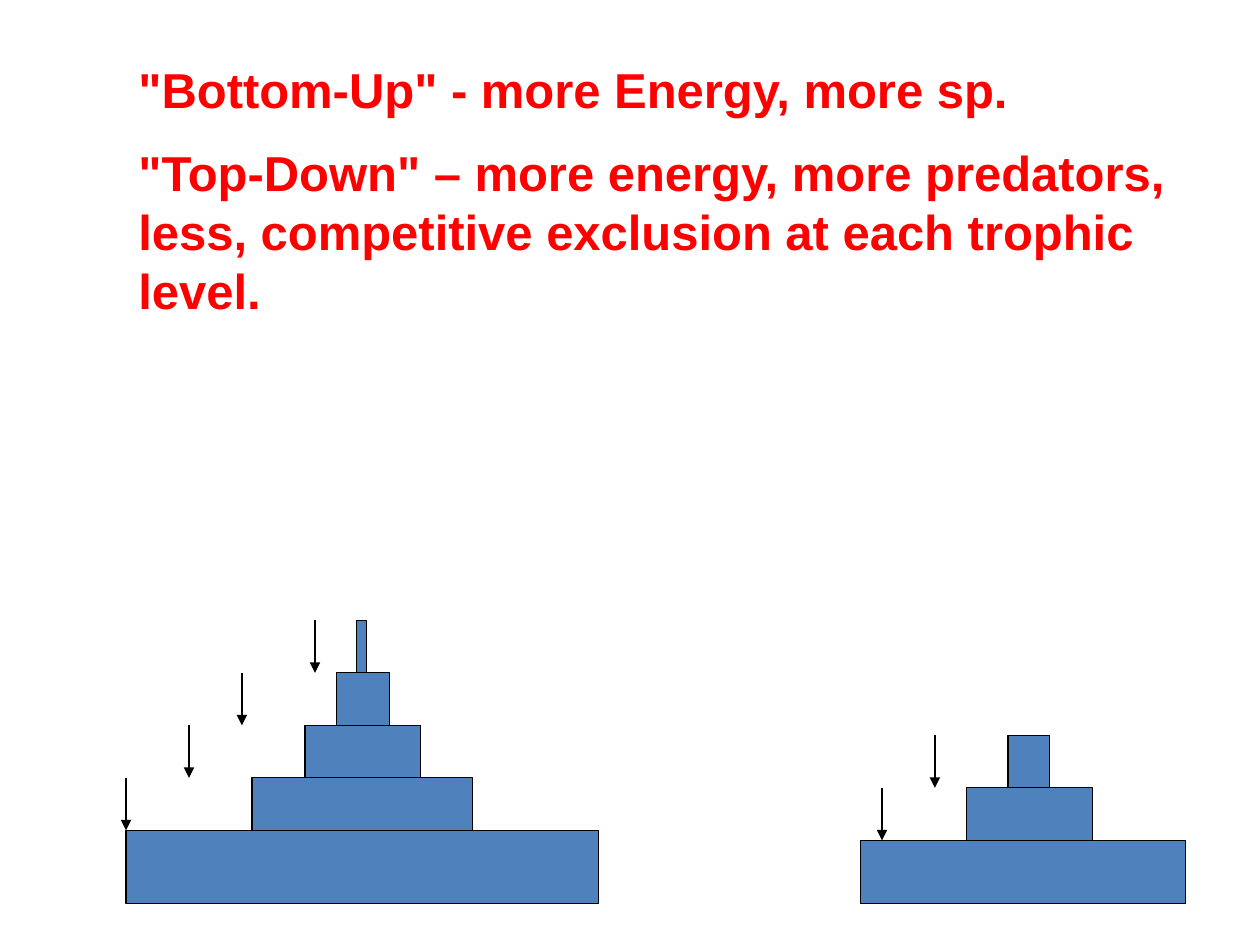
from lxml.etree import SubElement
from pptx import Presentation
from pptx.dml.color import RGBColor
from pptx.enum.shapes import MSO_CONNECTOR, MSO_SHAPE
from pptx.enum.text import MSO_AUTO_SIZE
from pptx.oxml.ns import qn
from pptx.util import Inches, Pt

STATEMENTS = [
    '"Bottom-Up" - more Energy, more sp.',
    '"Top-Down" – more energy, more predators, less, '
    'competitive exclusion at each trophic level.',
]
GROUND = 7.17
LEVEL_HEIGHT = 5 / 12

# Levels from the base upwards: left, width, x of the arrow beside it
TALL_PYRAMID = [
    (1, 3.75, None),
    (2, 1.75, 1),
    (2.42, 0.92, 1.5),
    (2.67, 0.42, 1.92),
    (2.83, 0.08, 2.5),
]
SHORT_PYRAMID = [
    (6.83, 2.58, None),
    (7.67, 1, 7),
    (8, 0.33, 7.42),
]


def color(hex_value):
    return RGBColor.from_string(hex_value)


def style_line(line):
    line.color.rgb = color("000000")
    line.width = Pt(0.75)


def add_statements(slide):
    box = slide.shapes.add_textbox(Inches(1), Inches(0.42), Inches(8.67), Inches(2.22))
    frame = box.text_frame
    frame.word_wrap = True
    frame.auto_size = MSO_AUTO_SIZE.SHAPE_TO_FIT_TEXT
    frame.text = "\n".join(STATEMENTS)
    for paragraph in frame.paragraphs:
        paragraph.font.name = "Arial"
        paragraph.font.size = Pt(28)
        paragraph.font.bold = True
        paragraph.font.color.rgb = color("FF0000")
    frame.paragraphs[1].space_before = Pt(14)


def add_level(slide, left, top, width, height):
    shape = slide.shapes.add_shape(
        MSO_SHAPE.RECTANGLE, Inches(left), Inches(top), Inches(width), Inches(height))
    shape.shadow.inherit = False
    shape.fill.solid()
    shape.fill.fore_color.rgb = color("4F81BD")
    style_line(shape.line)


def add_down_arrow(slide, x, top, bottom):
    connector = slide.shapes.add_connector(
        MSO_CONNECTOR.STRAIGHT, Inches(x), Inches(top), Inches(x), Inches(bottom))
    style_line(connector.line)
    SubElement(connector.line._get_or_add_ln(), qn("a:tailEnd"), type="triangle")
    SubElement(connector._element.spPr, qn("a:effectLst"))


def add_pyramid(slide, levels, base_height):
    """Stack the levels upwards from the ground, each with its arrow."""
    bottom, height = GROUND, base_height
    for left, width, arrow_x in levels:
        top = bottom - height
        add_level(slide, left, top, width, height)
        if arrow_x is not None:
            add_down_arrow(slide, arrow_x, top, bottom)
        bottom, height = top, LEVEL_HEIGHT


def main():
    presentation = Presentation()
    presentation.slide_width = Inches(10)
    presentation.slide_height = Inches(7.5)
    slide = presentation.slides.add_slide(presentation.slide_layouts[6])
    add_statements(slide)
    add_pyramid(slide, SHORT_PYRAMID, base_height=0.5)
    add_pyramid(slide, TALL_PYRAMID, base_height=0.58)
    presentation.save("out.pptx")


if __name__ == "__main__":
    main()
